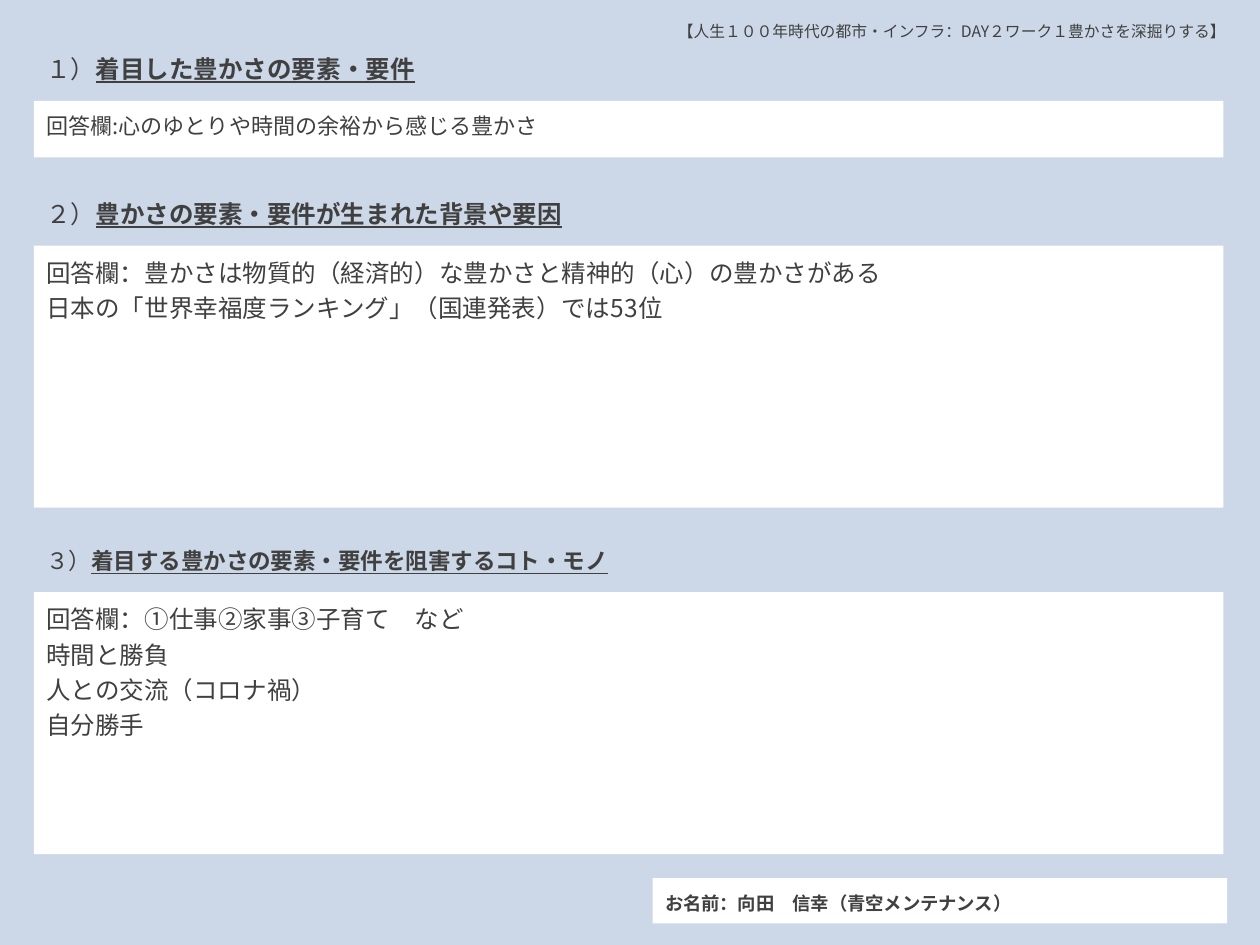
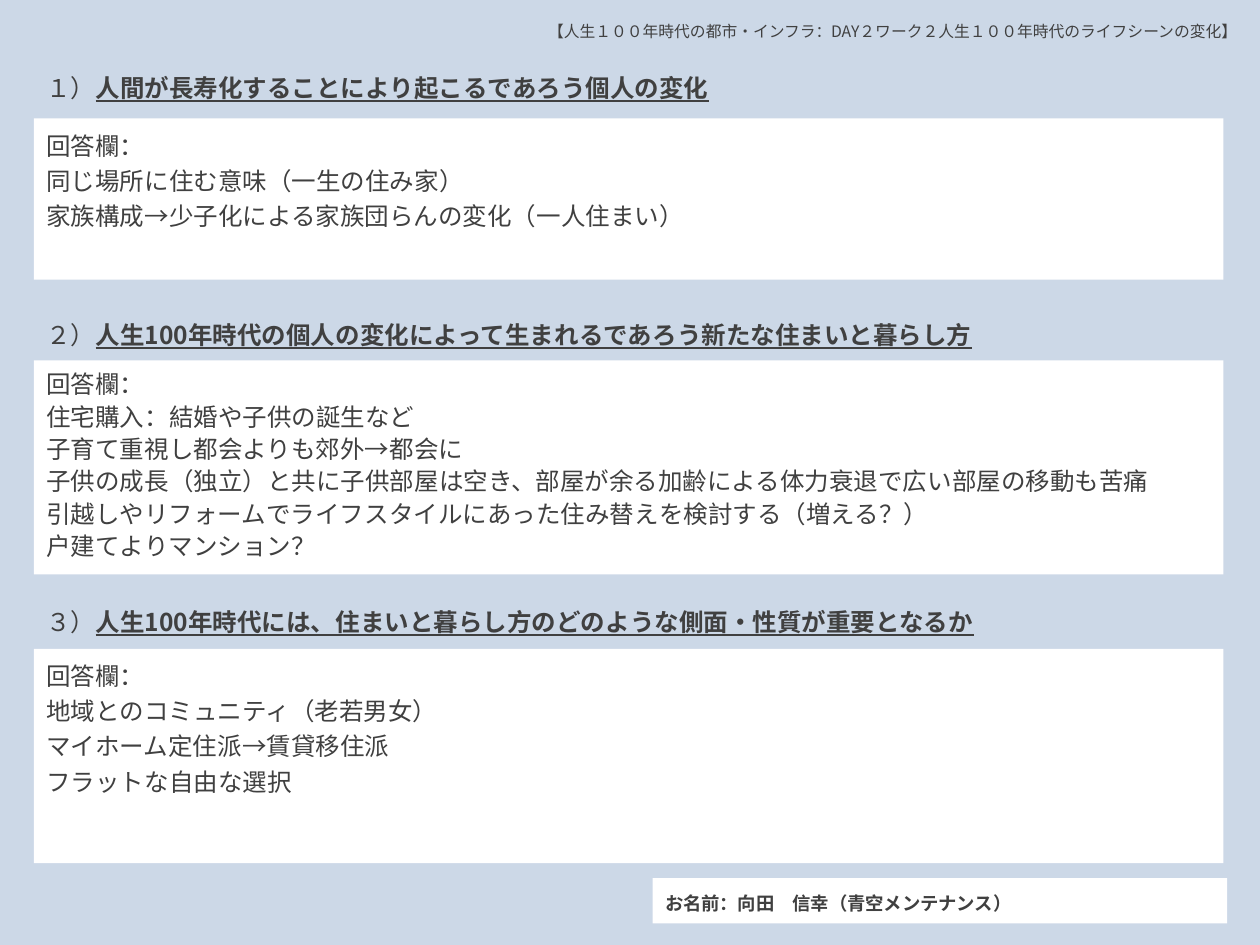
from lxml.etree import SubElement
from pptx import Presentation
from pptx.dml.color import RGBColor
from pptx.enum.shapes import MSO_SHAPE
from pptx.enum.text import MSO_ANCHOR, MSO_AUTO_SIZE, PP_ALIGN
from pptx.oxml.ns import qn
from pptx.util import Inches, Pt

COLORS = {"background": "CCD8E7", "panel": "FFFFFF", "text": "404040"}
FONT = "Noto Sans CJK JP"
LEFT, PANEL_WIDTH, HEADING_HEIGHT = 0.27, 9.44, 0.45
BODY_SIZE = 14
RESPONDENT = "お名前：向田　信幸（青空メンテナンス）"


class Worksheet:
    """Holds the shared style and the page being filled."""

    def __init__(self):
        self.deck = Presentation()
        self.deck.slide_width, self.deck.slide_height = Inches(10), Inches(7.5)
        self.page = None

    def color(self, name):
        return RGBColor.from_string(COLORS[name])

    def add_page(self):
        self.page = self.deck.slides.add_slide(self.deck.slide_layouts[5])
        fill = self.page.background.fill
        fill.solid()
        fill.fore_color.rgb = self.color("background")

    def set_lines(self, box, lines, anchor=MSO_ANCHOR.TOP, spacing=1.2):
        """Fill a box with lines; each line is a list of (text, format) spans."""
        frame = box.text_frame
        layout = {"word_wrap": True, "auto_size": MSO_AUTO_SIZE.NONE,
                  "vertical_anchor": anchor}
        for name, value in layout.items():
            setattr(frame, name, value)
        for index, spans in enumerate(lines):
            para = frame.add_paragraph() if index else frame.paragraphs[0]
            para.alignment, para.line_spacing = PP_ALIGN.LEFT, spacing
            for text, style in spans:
                span = para.add_run()
                span.text = text
                span.font.color.rgb = self.color("text")
                for name, value in {"name": FONT, **style}.items():
                    setattr(span.font, name, value)
                # East Asian characters take their own typeface
                properties = span._r.get_or_add_rPr()
                SubElement(properties, qn("a:ea")).set("typeface", FONT)

    def topic(self, text, left, width, height):
        title = self.page.shapes.title
        place = {"left": left, "top": 0.09, "width": width, "height": height}
        for name, value in place.items():
            setattr(title, name, Inches(value))
        self.set_lines(title, [[(text, {"size": Pt(9)})]])

    def heading(self, number, text, top, width, size=BODY_SIZE):
        box = self.page.shapes.add_textbox(
            Inches(LEFT), Inches(top), Inches(width), Inches(HEADING_HEIGHT))
        plain = {"size": Pt(size)}
        marked = {**plain, "bold": True, "underline": True}
        self.set_lines(box, [[(number, plain), (text, marked)]])

    def panel(self, left, top, width, height):
        box = self.page.shapes.add_shape(
            MSO_SHAPE.RECTANGLE, Inches(left), Inches(top), Inches(width), Inches(height))
        box.shadow.inherit = False
        box.fill.solid()
        box.fill.fore_color.rgb = self.color("panel")
        box.line.fill.background()
        return box

    def answer(self, lines, top, height, size=BODY_SIZE, spacing=1.2):
        box = self.panel(LEFT, top, PANEL_WIDTH, height)
        self.set_lines(box, [[(line, {"size": Pt(size)})] for line in lines], spacing=spacing)

    def respondent(self):
        box = self.panel(5.18, 6.97, 4.56, 0.36)
        self.set_lines(box, [[(RESPONDENT, {"size": Pt(10.5), "bold": True})]],
                       anchor=MSO_ANCHOR.MIDDLE)


def add_richness_page(sheet):
    sheet.add_page()
    sheet.topic("【人生１００年時代の都市・インフラ：DAY２ワーク１豊かさを深掘りする】",
                5.28, 4.83, 0.3)
    # Chosen element
    sheet.heading("１）", "着目した豊かさの要素・要件", 0.33, 3.21)
    sheet.answer(["回答欄:心のゆとりや時間の余裕から感じる豊かさ"], 0.8, 0.45, size=12.6)
    # Background
    sheet.heading("２）", "豊かさの要素・要件が生まれた背景や要因", 1.48, 4.77)
    sheet.answer(["回答欄：豊かさは物質的（経済的）な豊かさと精神的（心）の豊かさがある",
                  "日本の「世界幸福度ランキング」（国連発表）では53位"], 1.95, 2.08)
    # Obstacles
    sheet.heading("３）", "着目する豊かさの要素・要件を阻害するコト・モノ", 4.25, 4.84, size=12.9)
    sheet.answer(["回答欄：①仕事②家事③子育て　など", "時間と勝負",
                  "人との交流（コロナ禍）", "自分勝手"], 4.7, 2.08)
    sheet.respondent()


def add_life_scene_page(sheet):
    sheet.add_page()
    sheet.topic("【人生１００年時代の都市・インフラ：DAY２ワーク２人生１００年時代のライフシーンの変化】",
                4.25, 5.75, 0.36)
    # Personal change
    sheet.heading("１）", "人間が長寿化することにより起こるであろう個人の変化", 0.48, 5.6)
    sheet.answer(["回答欄：", "同じ場所に住む意味（一生の住み家）",
                  "家族構成→少子化による家族団らんの変化（一人住まい）"], 0.94, 1.28)
    # New ways of living
    sheet.heading("２）", "人生100年時代の個人の変化によって生まれるであろう新たな住まいと暮らし方",
                  2.44, 8.38)
    sheet.answer(["回答欄：", "住宅購入：結婚や子供の誕生など",
                  "子育て重視し都会よりも郊外→都会に",
                  "子供の成長（独立）と共に子供部屋は空き、部屋が余る加齢による体力衰退で広い部屋の移動も苦痛",
                  "引越しやリフォームでライフスタイルにあった住み替えを検討する（増える？）",
                  "戸建てよりマンション？"], 2.86, 1.7, spacing=1.1)
    # Qualities that matter
    sheet.heading("３）", "人生100年時代には、住まいと暮らし方のどのような側面・性質が重要となるか",
                  4.72, 8.38)
    sheet.answer(["回答欄：", "地域とのコミュニティ（老若男女）",
                  "マイホーム定住派→賃貸移住派", "フラットな自由な選択"], 5.15, 1.7)
    sheet.respondent()


def main():
    sheet = Worksheet()
    add_richness_page(sheet)
    add_life_scene_page(sheet)
    sheet.deck.save("out.pptx")


if __name__ == "__main__":
    main()
